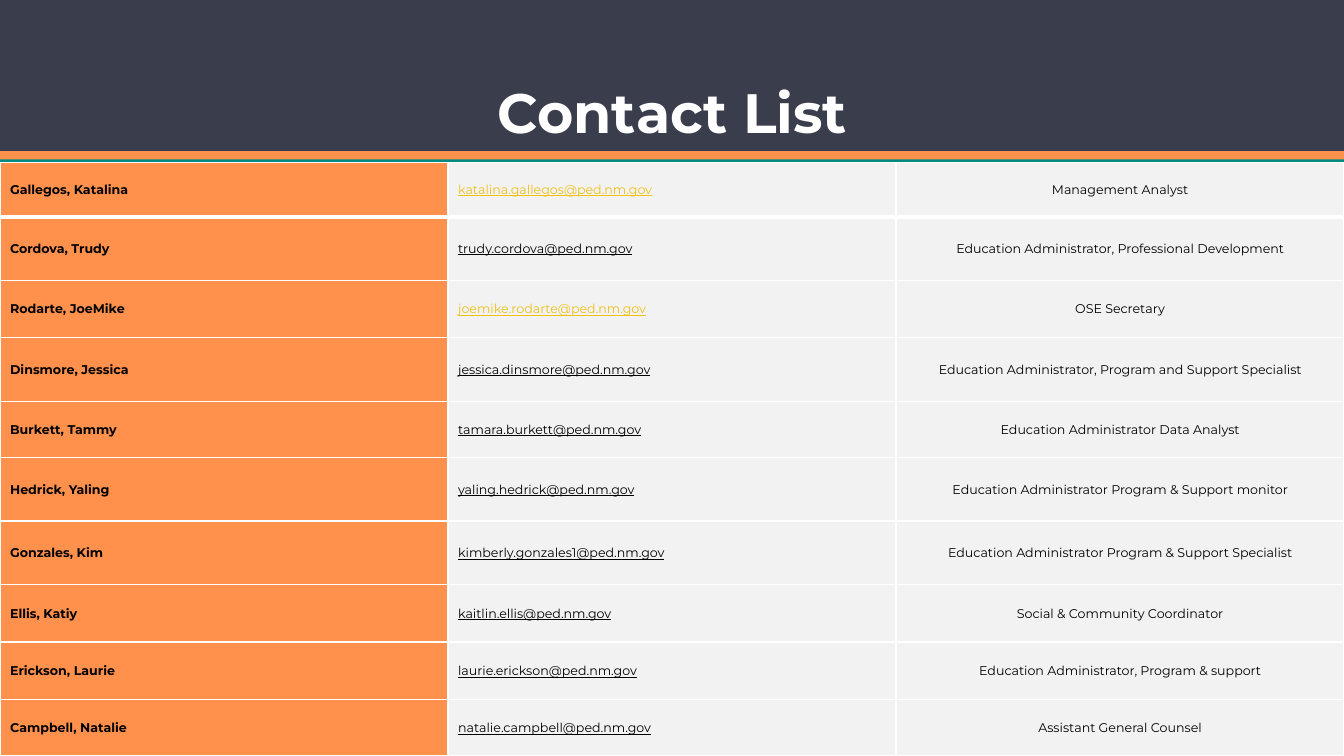
from lxml import etree
from pptx import Presentation
from pptx.dml.color import RGBColor
from pptx.enum.shapes import MSO_SHAPE
from pptx.enum.text import MSO_ANCHOR, PP_ALIGN
from pptx.oxml.ns import qn
from pptx.util import Inches, Pt


def rgb(color):
    return RGBColor.from_string(color)


def add_border(cell, side, width):
    ln = etree.SubElement(cell._tc.get_or_add_tcPr(), qn(f"a:{side}"), w=str(Pt(width)))
    fill = etree.SubElement(ln, qn("a:solidFill"))
    etree.SubElement(fill, qn("a:srgbClr"), val="FFFFFF")


prs = Presentation()
prs.slide_width = Inches(13.33)
prs.slide_height = Inches(7.5)
s = prs.slides.add_slide(prs.slide_layouts[6])

for top, height, color in [(0, 1.5, "3A3D4B"), (1.5, 0.09, "FF914D"), (1.58, 0.09, "048A81")]:
    sp = s.shapes.add_shape(MSO_SHAPE.RECTANGLE, 0, Inches(top), Inches(13.33), Inches(height))
    sp.shadow.inherit = False
    sp.fill.solid()
    sp.fill.fore_color.rgb = rgb(color)
    sp.line.fill.background()

title = s.shapes.add_textbox(Inches(1.42), Inches(0.65), Inches(10.5), Inches(0.9))
tf = title.text_frame
tf.word_wrap = True
tf.vertical_anchor = MSO_ANCHOR.MIDDLE
tf.text = "Contact List"
p = tf.paragraphs[0]
p.alignment = PP_ALIGN.CENTER
r = p.runs[0]
r.font.name = "Montserrat"
r.font.size = Pt(39.6)
r.font.bold = True
r.font.color.rgb = rgb("FFFFFF")

contacts = [
    (0.54, "Gallegos, Katalina", "katalina.gallegos@ped.nm.gov", "Management Analyst"),
    (0.63, "Cordova, Trudy", "trudy.cordova@ped.nm.gov", "Education Administrator, Professional Development"),
    (0.57, "Rodarte, JoeMike", "joemike.rodarte@ped.nm.gov", "OSE Secretary"),
    (0.63, "Dinsmore, Jessica", "jessica.dinsmore@ped.nm.gov",
     "Education Administrator, Program and Support Specialist"),
    (0.56, "Burkett, Tammy", "tamara.burkett@ped.nm.gov", "Education Administrator Data Analyst"),
    (0.63, "Hedrick, Yaling", "yaling.hedrick@ped.nm.gov", "Education Administrator Program & Support monitor"),
    (0.63, "Gonzales, Kim", "kimberly.gonzales1@ped.nm.gov",
     "Education Administrator Program & Support Specialist"),
    (0.57, "Ellis, Katiy", "kaitlin.ellis@ped.nm.gov", "Social & Community Coordinator"),
    (0.57, "Erickson, Laurie", "laurie.erickson@ped.nm.gov", "Education Administrator, Program & support"),
    (0.56, "Campbell, Natalie", "natalie.campbell@ped.nm.gov", "Assistant General Counsel"),
]
yellow_emails = (0, 2)

table = s.shapes.add_table(len(contacts), 3, 0, Inches(1.61), Inches(13.33), Inches(5.89)).table
table.first_row = False
table.horz_banding = False

for i, (height, *texts) in enumerate(contacts):
    table.rows[i].height = Inches(height)
    for j, text in enumerate(texts):
        cell = table.cell(i, j)
        add_border(cell, "lnL", 1)
        add_border(cell, "lnR", 1)
        add_border(cell, "lnT", 3 if i == 1 else 1)
        add_border(cell, "lnB", 3 if i == 0 else 1)
        cell.fill.solid()
        cell.fill.fore_color.rgb = rgb("FF914D" if j == 0 else "F2F2F2")
        cell.vertical_anchor = MSO_ANCHOR.MIDDLE
        cell.text_frame.text = text
        p = cell.text_frame.paragraphs[0]
        p.alignment = PP_ALIGN.CENTER if j == 2 else PP_ALIGN.LEFT
        p.line_spacing = 1.07
        r = p.runs[0]
        r.font.name = "Montserrat"
        r.font.size = Pt(9)
        r.font.bold = j == 0
        r.font.underline = j == 1
        r.font.color.rgb = rgb("EFC119" if j == 1 and i in yellow_emails else "000000")

prs.save("out.pptx")
